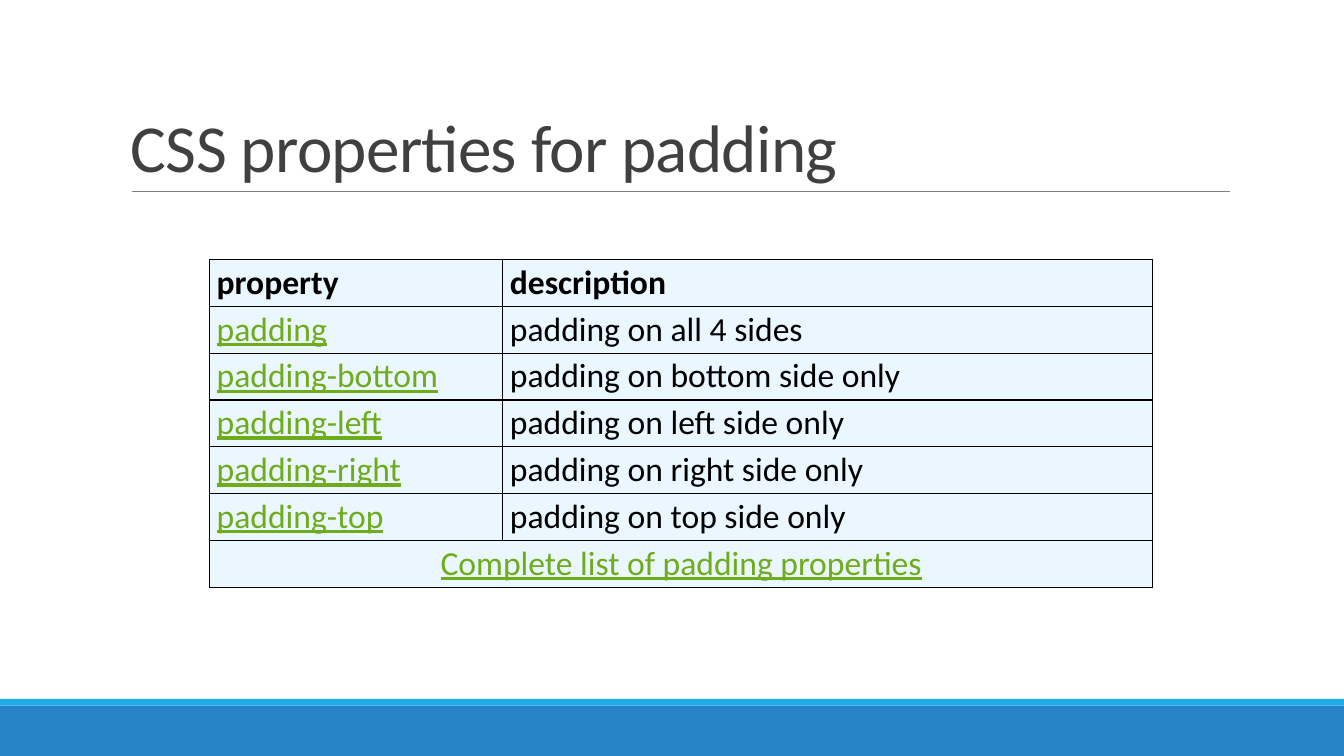
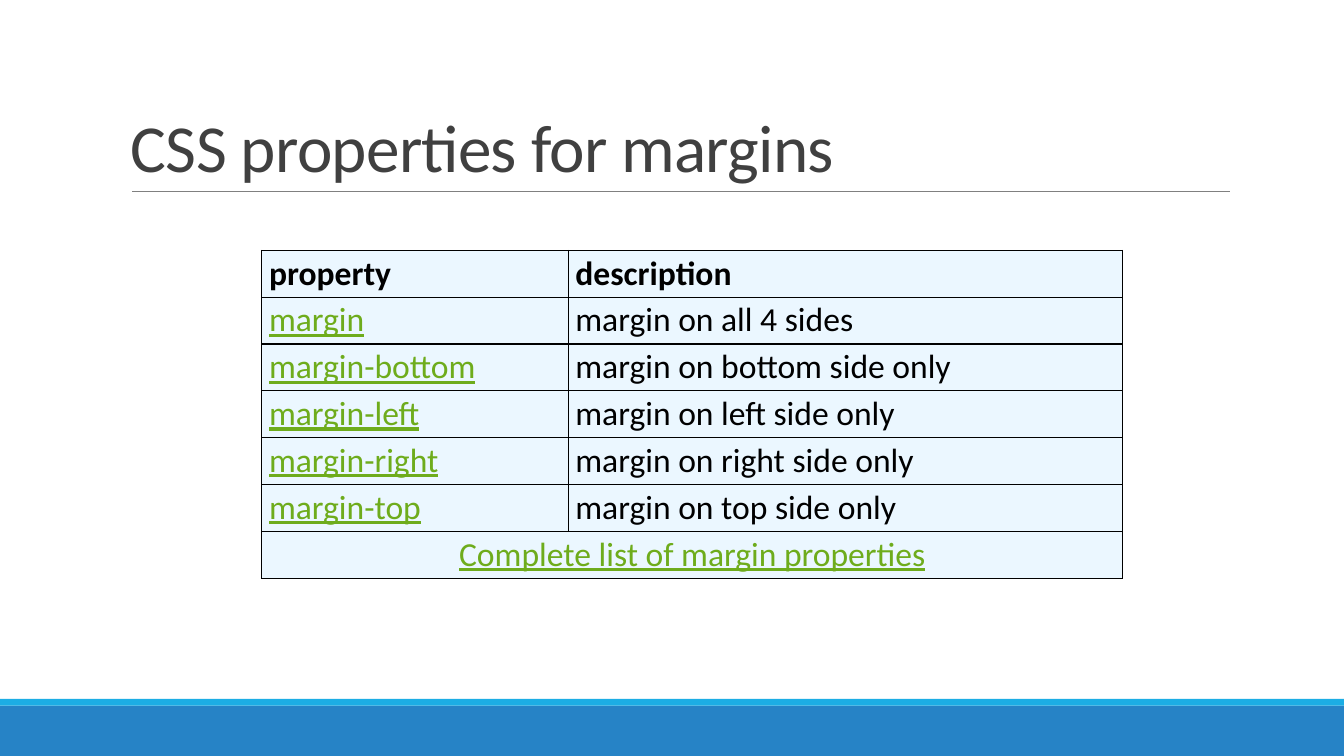
from lxml import etree
from pptx import Presentation
from pptx.dml.color import RGBColor
from pptx.enum.shapes import MSO_CONNECTOR, MSO_SHAPE
from pptx.enum.text import MSO_ANCHOR, PP_ALIGN
from pptx.oxml.ns import qn
from pptx.util import Cm, Pt

RECTANGLE = MSO_SHAPE.RECTANGLE
STRAIGHT = MSO_CONNECTOR.STRAIGHT
BOTTOM = MSO_ANCHOR.BOTTOM
LEFT, CENTER = PP_ALIGN.LEFT, PP_ALIGN.CENTER

FONT = "Calibri"
BLACK = "000000"
TITLE_GREY = "404040"
RULE_GREY = "808080"
LINK_GREEN = "6EAC1C"
CELL_BLUE = "EBF7FF"
BAND_BLUE = "2683C6"
BAND_CYAN = "1CADE4"

# Lengths in centimetres
SLIDE_W, SLIDE_H = 33.87, 19.05
BAND_H, STRIPE_H = 1.27, 0.17
TITLE_BOX = (3.05, 0.8, 27.94, 4.03)
TITLE_INSET = 0.28
ROW_H = 1.18
SIDES = ("all 4 sides", "bottom side only", "left side only",
         "right side only", "top side only")


def color(hex_code):
    return RGBColor.from_string(hex_code)


def style_text(paragraph, size, hex_code, bold=False, underline=False):
    font = paragraph.font
    font.name, font.size = FONT, Pt(size)
    font.bold, font.underline = bold, underline
    font.color.rgb = color(hex_code)


def add_band(slide, top, height, hex_code):
    band = slide.shapes.add_shape(RECTANGLE, 0, Cm(top), Cm(SLIDE_W), Cm(height))
    band.shadow.inherit = False
    band.fill.solid()
    band.fill.fore_color.rgb = color(hex_code)
    band.line.fill.background()


def add_footer_bands(slide):
    band_top = SLIDE_H - BAND_H
    add_band(slide, band_top, BAND_H, BAND_BLUE)
    add_band(slide, band_top - STRIPE_H, STRIPE_H, BAND_CYAN)


def add_title(slide, text, box):
    left, top, width, height = box

    # Rule under the title
    bottom = Cm(top + height)
    rule = slide.shapes.add_connector(
        STRAIGHT, Cm(left + TITLE_INSET), bottom, Cm(left + width), bottom)
    rule.line.color.rgb = color(RULE_GREY)
    rule.line.width = Pt(0.5)
    etree.SubElement(rule._element.spPr, qn("a:effectLst"))

    # Title text, slightly tightened
    title = slide.shapes.add_textbox(*map(Cm, box)).text_frame
    title.word_wrap = True
    title.vertical_anchor = BOTTOM
    paragraph = title.paragraphs[0]
    paragraph.line_spacing = 0.85
    paragraph.add_run().text = text
    style_text(paragraph, 48, TITLE_GREY)
    paragraph.runs[0]._r.get_or_add_rPr().set("spc", "-50")


def add_borders(cell):
    properties = cell._tc.get_or_add_tcPr()
    for index, edge in enumerate(("a:lnL", "a:lnR", "a:lnT", "a:lnB")):
        border = etree.Element(qn(edge), w=str(Pt(1)))
        fill = etree.SubElement(border, qn("a:solidFill"))
        etree.SubElement(fill, qn("a:srgbClr"), val=BLACK)
        properties.insert(index, border)


def fill_cell(cell, text, hex_code=BLACK, align=LEFT, bold=False):
    cell.margin_left = cell.margin_right = Cm(0.18)
    cell.margin_top = cell.margin_bottom = Cm(0.07)
    cell.fill.solid()
    cell.fill.fore_color.rgb = color(CELL_BLUE)
    add_borders(cell)
    paragraph = cell.text_frame.paragraphs[0]
    paragraph.alignment = align
    if text:
        paragraph.add_run().text = text
    style_text(paragraph, 24, hex_code, bold, underline=hex_code == LINK_GREEN)


def add_property_table(slide, name, left, top, column_widths):
    rows = [("property", "description")]
    for index, side in enumerate(SIDES):
        suffix = f"-{side.split()[0]}" if index else ""
        rows.append((name + suffix, f"{name} on {side}"))
    rows.append((f"Complete list of {name} properties", ""))
    last = len(rows) - 1

    table = slide.shapes.add_table(
        len(rows), 2, Cm(left), Cm(top),
        Cm(sum(column_widths)), Cm(ROW_H * len(rows))).table
    table.first_row = table.horz_banding = False
    for column, width in zip(table.columns, column_widths):
        column.width = Cm(width)
    for row in table.rows:
        row.height = Cm(ROW_H)

    # The closing link spans both columns
    table.cell(last, 0).merge(table.cell(last, 1))
    for r, texts in enumerate(rows):
        for c, text in enumerate(texts):
            fill_cell(table.cell(r, c), text,
                      hex_code=LINK_GREEN if r and not c else BLACK,
                      align=CENTER if r == last else LEFT,
                      bold=r == 0)


def add_property_slide(prs, title, name, left, top, column_widths):
    slide = prs.slides.add_slide(prs.slide_layouts[6])
    add_footer_bands(slide)
    add_title(slide, f"CSS properties for {title}", TITLE_BOX)
    add_property_table(slide, name, left, top, column_widths)


def main():
    prs = Presentation()
    prs.slide_width, prs.slide_height = Cm(SLIDE_W), Cm(SLIDE_H)
    add_property_slide(prs, "padding", "padding", 5.28, 6.54, (7.39, 16.38))
    add_property_slide(prs, "margins", "margin", 6.6, 6.31, (7.72, 13.97))
    prs.save("out.pptx")


if __name__ == "__main__":
    main()
